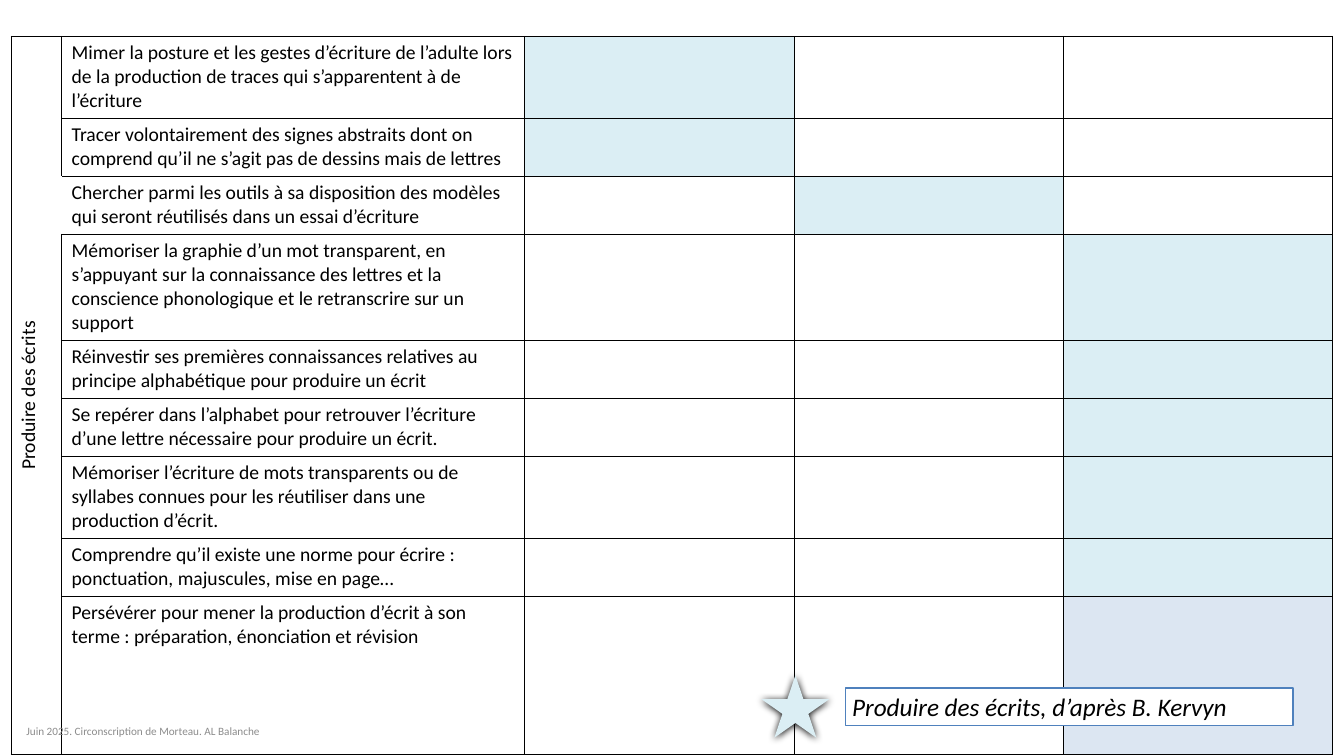
from lxml.etree import SubElement
from pptx import Presentation
from pptx.dml.color import RGBColor
from pptx.enum.shapes import MSO_SHAPE
from pptx.enum.text import MSO_ANCHOR, MSO_AUTO_SIZE, PP_ALIGN
from pptx.oxml.ns import qn
from pptx.util import Cm, Pt

BLACK = RGBColor(0x00, 0x00, 0x00)
WHITE = RGBColor(0xFF, 0xFF, 0xFF)
GREY = RGBColor(0x8C, 0x8C, 0x8C)
BLUE = RGBColor(0x4F, 0x81, 0xBD)
AQUA = RGBColor(0xDB, 0xEE, 0xF4)
LILAC = RGBColor(0xDC, 0xE6, 0xF2)

TITLE = "Produire des écrits"
COLS = [1.9, 17.5, 10.18, 10.18, 10.18]
# Skill, lines of text, shaded column, shade
SKILLS = [
    ("Mimer la posture et les gestes d’écriture de l’adulte lors de la production "
     "de traces qui s’apparentent à de l’écriture", 3, 2, AQUA),
    ("Tracer volontairement des signes abstraits dont on comprend qu’il ne s’agit "
     "pas de dessins mais de lettres", 2, 2, AQUA),
    ("Chercher parmi les outils à sa disposition des modèles qui seront réutilisés "
     "dans un essai d’écriture", 2, 3, AQUA),
    ("Mémoriser la graphie d’un mot transparent, en s’appuyant sur la connaissance "
     "des lettres et la conscience phonologique et le retranscrire sur un support",
     4, 4, AQUA),
    ("Réinvestir ses premières connaissances relatives au principe alphabétique "
     "pour produire un écrit", 2, 4, AQUA),
    ("Se repérer dans l’alphabet pour retrouver l’écriture d’une lettre nécessaire "
     "pour produire un écrit.", 2, 4, AQUA),
    ("Mémoriser l’écriture de mots transparents ou de syllabes connues pour les "
     "réutiliser dans une production d’écrit.", 3, 4, AQUA),
    ("Comprendre qu’il existe une norme pour écrire : ponctuation, majuscules, "
     "mise en page…", 2, 4, AQUA),
    ("Persévérer pour mener la production d’écrit à son terme : préparation, "
     "énonciation et révision", 2, 4, LILAC),
]
OPEN_ROW = 2  # row whose skill has a white left edge


def write(frame, text, size, color=BLACK, align=PP_ALIGN.LEFT, italic=None):
    frame.text = text
    para = frame.paragraphs[0]
    para.alignment = align
    font = para.runs[0].font
    font.name, font.size, font.italic = "Calibri", Pt(size), italic
    font.color.rgb = color


def edge(cell, left=BLACK):
    props = cell._tc.get_or_add_tcPr()
    for side, color in (("L", left), ("R", BLACK), ("T", BLACK), ("B", BLACK)):
        line = SubElement(props, qn("a:ln" + side), w=str(Pt(1)))
        fill = SubElement(line, qn("a:solidFill"))
        SubElement(fill, qn("a:srgbClr"), val=str(color))


def add_grid(slide, x, y):
    high = [0.9 * lines + 0.36 for _, lines, _, _ in SKILLS]
    table = slide.shapes.add_table(len(SKILLS), len(COLS), Cm(x), Cm(y),
                                   Cm(sum(COLS)), Cm(sum(high))).table
    table.first_row = table.horz_banding = False
    for col, width in zip(table.columns, COLS):
        col.width = Cm(width)

    # Skills and their shaded level
    for r, (skill, _, level, shade) in enumerate(SKILLS):
        table.rows[r].height = Cm(high[r])
        for c in range(len(COLS)):
            cell = table.cell(r, c)
            cell.margin_left = cell.margin_right = Cm(0.38)
            cell.margin_top = cell.margin_bottom = Cm(0.19)
            edge(cell, WHITE if (r, c) == (OPEN_ROW, 1) else BLACK)
            if c == level:
                cell.fill.solid()
                cell.fill.fore_color.rgb = shade
            else:
                cell.fill.background()
        write(table.cell(r, 1).text_frame, skill, 21)

    # Rotated heading down the first column
    head = table.cell(0, 0)
    head.merge(table.cell(len(SKILLS) - 1, 0))
    head.vertical_anchor = MSO_ANCHOR.MIDDLE
    head._tc.get_or_add_tcPr().set("vert", "vert270")
    write(head.text_frame, TITLE, 21, align=PP_ALIGN.CENTER)


def add_credit(slide, x, y):
    # Star with a soft shadow
    star = slide.shapes.add_shape(MSO_SHAPE.STAR_5_POINT, Cm(x), Cm(y),
                                  Cm(2.57), Cm(2.36))
    star.fill.solid()
    star.fill.fore_color.rgb = AQUA
    star.line.fill.background()
    star.shadow.inherit = False
    glow = SubElement(star._element.spPr.find(qn("a:effectLst")), qn("a:outerShdw"),
                      blurRad=str(Pt(8.5)), dist=str(Pt(1)), dir="5400000",
                      rotWithShape="0")
    SubElement(glow, qn("a:srgbClr"), val=str(BLACK))

    # Framed credit
    box = slide.shapes.add_shape(MSO_SHAPE.RECTANGLE, Cm(x + 3.18), Cm(y + 0.48),
                                 Cm(16.9), Cm(1.42))
    box.fill.solid()
    box.fill.fore_color.rgb = WHITE
    box.line.color.rgb = BLUE
    box.line.width = Pt(2)
    box.shadow.inherit = False
    frame = box.text_frame
    frame.word_wrap = True
    frame.auto_size = MSO_AUTO_SIZE.SHAPE_TO_FIT_TEXT
    frame.vertical_anchor = MSO_ANCHOR.TOP
    write(frame, TITLE + ", d’après B. Kervyn", 27, italic=True)


def add_foot(slide, x, y):
    frame = slide.shapes.add_textbox(Cm(x), Cm(y), Cm(9.96), Cm(0.84)).text_frame
    frame.word_wrap = True
    frame.vertical_anchor = MSO_ANCHOR.MIDDLE
    write(frame, "Juin 2025. Circonscription de Morteau. AL Balanche", 12, GREY,
          PP_ALIGN.CENTER)


def main():
    deck = Presentation()
    deck.slide_width, deck.slide_height = Cm(50.8), Cm(28.58)
    slide = deck.slides.add_slide(deck.slide_layouts[6])
    add_grid(slide, 0.43, 1.37)
    add_credit(slide, 28.78, 25.53)
    add_foot(slide, 0.43, 27.2)
    deck.save("out.pptx")


if __name__ == "__main__":
    main()
